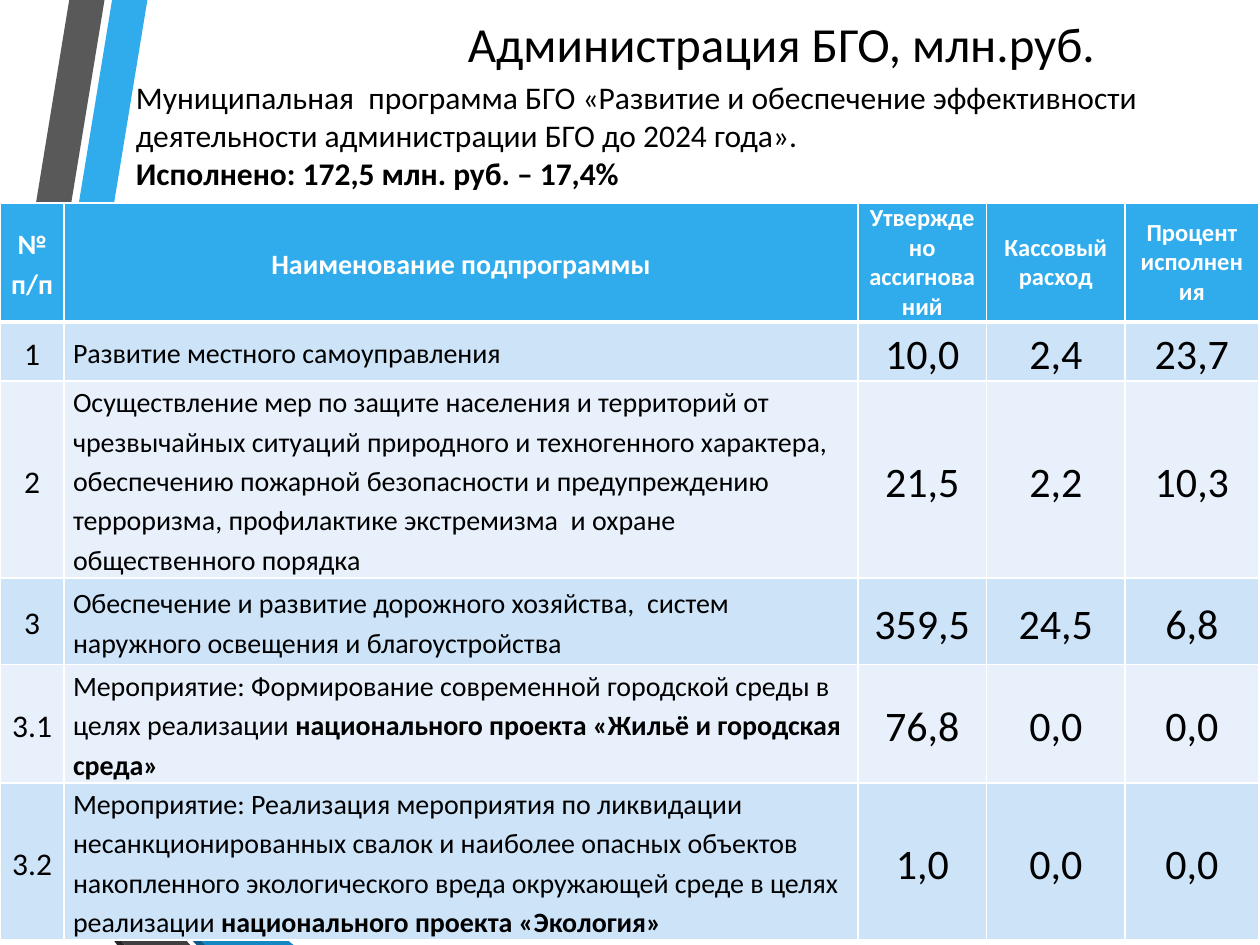
"""Build a budget slide with a table of subprogrammes."""
from lxml import etree
from pptx import Presentation
from pptx.dml.color import RGBColor
from pptx.enum.text import MSO_ANCHOR, PP_ALIGN
from pptx.oxml.ns import qn
from pptx.util import Inches, Pt

MID, TOP = MSO_ANCHOR.MIDDLE, MSO_ANCHOR.TOP
LEFT, CENTER = PP_ALIGN.LEFT, PP_ALIGN.CENTER
FONT = "Calibri"
HEX = {
    "blue": "30ACEC", "gray": "595959", "coal": "262626", "navy": "0C5A82",
    "sea": "1287C3", "dark": "404040", "odd": "CDE3F8", "even": "E8F1FB",
    "white": "FFFFFF", "black": "000000",
}
BANDS = [
    ("blue", [(0, 5.44), (0, 5.75), (0.22, 5.79), (1.17, 0), (0.89, 0)]),
    ("gray", [(0.83, 0), (0.55, 0), (0, 3.36), (0, 5.06)]),
    ("coal", [(0, 6.19), (0, 6.21), (0.93, 7.5), (0.99, 7.5)]),
    ("navy", [(0, 5.79), (0, 5.8), (1.56, 7.5), (1.63, 7.5)]),
    ("sea", [(0, 5.79), (1.63, 7.5), (2.33, 7.5), (0.22, 5.79), (0, 5.75)]),
    ("dark", [(0, 6.19), (0.99, 7.5), (1.51, 7.5), (0, 5.86)]),
]
TITLE = "Администрация БГО, млн.руб."
INTRO = [
    ("Муниципальная  программа БГО «Развитие и обеспечение эффективности "
     "деятельности администрации БГО до 2024 года».", False),
    ("Исполнено: 172,5 млн. руб. – 17,4%", True),
]
HEAD = ["№ п/п", "Наименование подпрограммы", "Утверждено ассигнований",
        "Кассовый расход", "Процент исполнения"]
ROWS = [
    ("1", ["Развитие местного самоуправления"], "10,0", "2,4", "23,7"),
    ("2", ["Осуществление мер по защите населения и территорий от "
           "чрезвычайных ситуаций природного и техногенного характера, "
           "обеспечению пожарной безопасности и предупреждению терроризма, "
           "профилактике экстремизма  и охране общественного порядка"],
     "21,5", "2,2", "10,3"),
    ("3", ["Обеспечение и развитие дорожного хозяйства,  систем наружного "
           "освещения и благоустройства"], "359,5", "24,5", "6,8"),
    ("3.1", ["Мероприятие: Формирование современной городской среды в целях "
             "реализации ",
             "национального проекта «Жильё и городская среда»"],
     "76,8", "0,0", "0,0"),
    ("3.2", ["Мероприятие: Реализация мероприятия по ликвидации "
             "несанкционированных свалок и наиболее опасных объектов "
             "накопленного экологического вреда окружающей среде в целях "
             "реализации ", "национального проекта «Экология»"],
     "1,0", "0,0", "0,0"),
]
WIDTHS = [0.51, 6.3, 1.02, 1.1, 1.06]
HEIGHTS = [0.52, 0.36, 1.51, 0.69, 0.89, 1.1]
HEAD_SIZES = [16, 16, 14, 14, 14]
BODY_SIZES = [18, 16, 24, 24, 24]


def paint(fill, name):
    fill.solid()
    fill.fore_color.rgb = RGBColor.from_string(HEX[name])


def add_run(para, text, size, color="black", bold=False):
    run = para.add_run()
    run.text = text
    run.font.name, run.font.size, run.font.bold = FONT, Pt(size), bold
    run.font.color.rgb = RGBColor.from_string(HEX[color])


def add_band(slide, name, points):
    first, *rest = [(Inches(x), Inches(y)) for x, y in points]
    form = slide.shapes.build_freeform(*first)
    form.add_line_segments(rest, close=True)
    band = form.convert_to_shape()
    band.shadow.inherit = False
    paint(band.fill, name)
    band.line.fill.background()


def add_edge(cell, side, width):
    line = etree.SubElement(cell._tc.get_or_add_tcPr(), qn("a:ln" + side),
                            w=str(Pt(width)))
    fill = etree.SubElement(line, qn("a:solidFill"))
    etree.SubElement(fill, qn("a:srgbClr"), val=HEX["white"])


def fill_cell(cell, row, col, parts):
    head = row == 0
    cell.vertical_anchor = MID
    cell.margin_left = cell.margin_right = Inches(0.07)
    cell.margin_top = cell.margin_bottom = 0
    thick = {"B": 3} if head else {"T": 3} if row == 1 else {}
    for side in "LRTB":
        add_edge(cell, side, thick.get(side, 1))
    paint(cell.fill, "blue" if head else "odd" if row % 2 else "even")
    para = cell.text_frame.paragraphs[0]
    para.alignment = LEFT if col == 1 and not head else CENTER
    if not head or col < 2:
        para.line_spacing = 1.15
    size = (HEAD_SIZES if head else BODY_SIZES)[col]
    for i, part in enumerate(parts):
        add_run(para, part, size, "white" if head else "black", head or i > 0)


def add_grid(slide):
    grid = slide.shapes.add_table(len(HEIGHTS), len(WIDTHS), 0, Inches(1.61),
                                  Inches(10), Inches(5.76)).table
    for col, width in zip(grid.columns, WIDTHS):
        col.width = Inches(width)
    for row, height in zip(grid.rows, HEIGHTS):
        row.height = Inches(height)
    for r, values in enumerate([HEAD, *ROWS]):
        for c, value in enumerate(values):
            parts = value if isinstance(value, list) else [value]
            fill_cell(grid.cell(r, c), r, c, parts)


def place(shape, left, top, width, height):
    shape.left, shape.top = Inches(left), Inches(top)
    shape.width, shape.height = Inches(width), Inches(height)
    shape.text_frame.word_wrap = True
    shape.text_frame.vertical_anchor = TOP


def add_texts(slide):
    title = slide.shapes.title
    place(title, 2.56, 0.06, 7.28, 0.57)
    para = title.text_frame.paragraphs[0]
    para.alignment = CENTER
    add_run(para, TITLE, 28)
    box = slide.shapes.add_textbox(0, 0, 0, 0)
    place(box, 0.98, 0.57, 8.32, 1.01)
    frame = box.text_frame
    for i, (text, bold) in enumerate(INTRO):
        para = frame.add_paragraph() if i else frame.paragraphs[0]
        add_run(para, text, 18, bold=bold)


def main():
    deck = Presentation()
    deck.slide_width, deck.slide_height = Inches(10), Inches(7.5)
    slide = deck.slides.add_slide(deck.slide_layouts[5])
    paint(slide.background.fill, "white")
    for name, points in BANDS:
        add_band(slide, name, points)
    add_grid(slide)
    add_texts(slide)
    deck.save("out.pptx")


if __name__ == "__main__":
    main()
